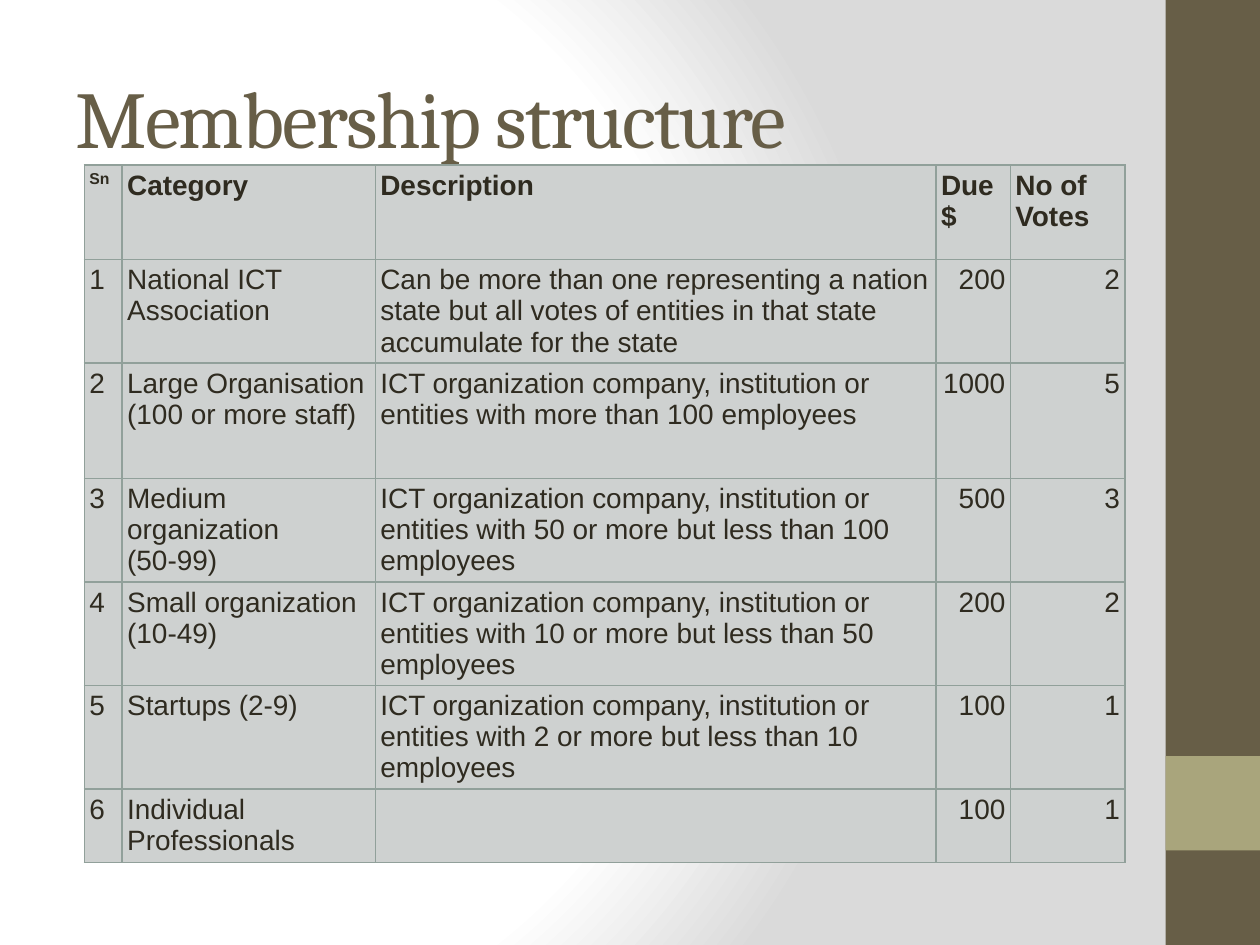
from pptx import Presentation
from pptx.dml.color import RGBColor
from pptx.enum.shapes import MSO_SHAPE
from pptx.enum.text import MSO_ANCHOR, MSO_AUTO_SIZE, PP_ALIGN
from pptx.oxml import parse_xml
from pptx.oxml.ns import nsdecls
from pptx.util import Pt

BROWN = RGBColor(0x67, 0x5E, 0x47)
OLIVE = RGBColor(0xA9, 0xA5, 0x7C)
INK = RGBColor(0x2F, 0x2B, 0x20)
CELL = RGBColor(0xCE, 0xD1, 0xD0)
BORDER = RGBColor(0x91, 0xA0, 0x9A)

ROWS = [
    ("Sn", "Category", "Description", "Due $", "No of Votes"),
    ("1", "National ICT Association",
     "Can be more than one representing a nation state but all votes of "
     "entities in that state accumulate for the state", "200", "2"),
    ("2", "Large Organisation\n(100 or more staff)",
     "ICT organization company, institution or entities with more than 100 employees",
     "1000", "5"),
    ("3", "Medium organization\n(50-99)",
     "ICT organization company, institution or entities with 50 or more but "
     "less than 100 employees", "500", "3"),
    ("4", "Small organization\n(10-49)",
     "ICT organization company, institution or entities with 10 or more but "
     "less than 50 employees", "200", "2"),
    ("5", "Startups (2-9)",
     "ICT organization company, institution or entities with 2 or more but "
     "less than 10 employees", "100", "1"),
    ("6", "Individual Professionals", "", "100", "1"),
]
COL_WIDTHS = [21.6, 144.7, 320.4, 42.5, 65.5]
ROW_HEIGHTS = [54, 54, 66, 54, 54, 54, 42]

prs = Presentation()
prs.slide_width, prs.slide_height = Pt(720), Pt(540)
s = prs.slides.add_slide(prs.slide_layouts[5])

stops = "".join(
    f'<a:gs pos="{pos}"><a:srgbClr val="{color}"/></a:gs>'
    for pos, color in [(0, "FFFFFF"), (75000, "FFFFFF"), (100000, "DADADA")])
s.element.cSld.insert(0, parse_xml(
    f'<p:bg {nsdecls("p", "a")}><p:bgPr><a:gradFill rotWithShape="1">'
    f'<a:gsLst>{stops}</a:gsLst><a:path path="circle">'
    '<a:fillToRect l="20000" t="50000" r="100000" b="50000"/></a:path>'
    '</a:gradFill><a:effectLst/></p:bgPr></p:bg>'))

for top, height, color in [(0, 540, BROWN), (432, 54, OLIVE)]:
    sp = s.shapes.add_shape(MSO_SHAPE.RECTANGLE, Pt(666), Pt(top), Pt(54), Pt(height))
    sp.shadow.inherit = False
    sp.fill.solid()
    sp.fill.fore_color.rgb = color
    sp.line.fill.background()

title = s.shapes.title
title.element.getparent().append(title.element)
title.left, title.top, title.width, title.height = Pt(36), Pt(21.6), Pt(600), Pt(90)
tf = title.text_frame
tf.text = "Membership structure"
tf.word_wrap = True
tf.auto_size = MSO_AUTO_SIZE.NONE
tf.vertical_anchor = MSO_ANCHOR.MIDDLE
p = tf.paragraphs[0]
p.alignment = PP_ALIGN.LEFT
p.font.name, p.font.size = "Cambria", Pt(46)
p.font.color.rgb = BROWN
p.runs[0].font.bold = False
p.runs[0].font.fill
p.runs[0].font.language_id = None
p.runs[0].text = "Membership structure"
p.runs[0]._r.get_or_add_rPr().set("spc", "-100")

table = s.shapes.add_table(len(ROWS), len(COL_WIDTHS), Pt(48.2), Pt(94.3),
                           Pt(sum(COL_WIDTHS)), Pt(sum(ROW_HEIGHTS))).table
for col, width in zip(table.columns, COL_WIDTHS):
    col.width = Pt(width)
for row, height in zip(table.rows, ROW_HEIGHTS):
    row.height = Pt(height)

for i, texts in enumerate(ROWS):
    for j, text in enumerate(texts):
        cell = table.cell(i, j)
        cell.text = text
        cell.margin_left = cell.margin_right = Pt(2.9)
        cell.margin_top = cell.margin_bottom = Pt(2.9)
        tcPr = cell._tc.get_or_add_tcPr()
        for side in ("lnL", "lnR", "lnT", "lnB"):
            tcPr.append(parse_xml(
                f'<a:{side} {nsdecls("a")} w="{Pt(1)}"><a:solidFill>'
                f'<a:srgbClr val="{BORDER}"/></a:solidFill></a:{side}>'))
        cell.fill.solid()
        cell.fill.fore_color.rgb = CELL
        for p in cell.text_frame.paragraphs:
            p.alignment = PP_ALIGN.RIGHT if i > 0 and j > 2 else PP_ALIGN.LEFT
            p.font.name = "Arial"
            p.font.size = Pt(9 if i == j == 0 else 16)
            p.font.bold = i == 0
            p.font.color.rgb = INK

prs.save("out.pptx")
